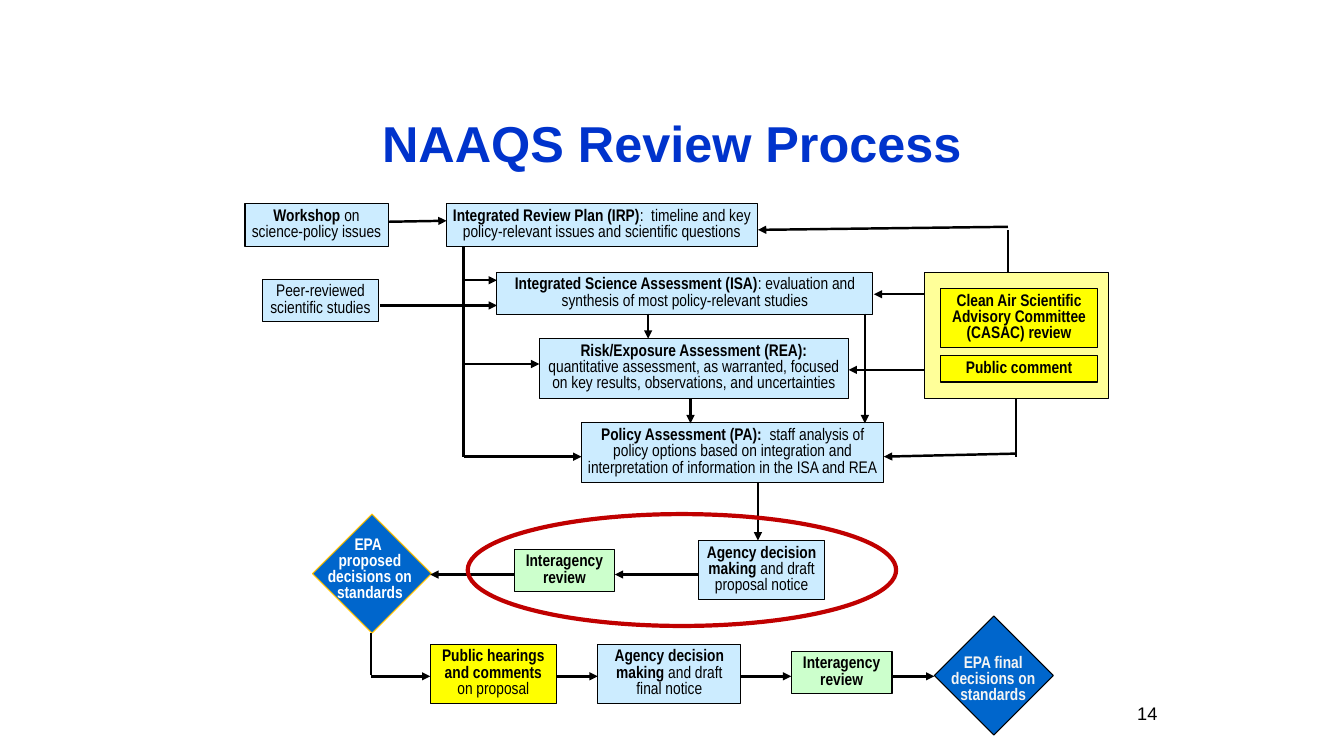
from lxml.etree import SubElement
from pptx import Presentation
from pptx.dml.color import RGBColor
from pptx.enum.shapes import MSO_CONNECTOR as Connector, MSO_SHAPE as Shape
from pptx.enum.text import MSO_ANCHOR as Anchor, PP_ALIGN as Align
from pptx.oxml.ns import qn
from pptx.util import Pt

COLORS = {
    "black": "000000", "white": "FFFFFF", "off_white": "F4F4F4",
    "title": "0033CC", "blue": "CCECFF", "green": "CCFFCC",
    "yellow": "FFFF00", "panel": "FFFF99", "decision": "0066CC",
    "gold": "FFC000", "red": "C00000",
}
NARROW, WIDE = "Arial Narrow", "Arial"
TWO_LINES, THREE_LINES = 30.6, 42.5

PANEL = (660.2, 194.4, 131.8, 90)
HIGHLIGHT = (334.1, 367.2, 306, 79.9)
DIAMONDS = [
    ((667.4, 440, 85, 85), "black"),
    ((223.2, 367.2, 85, 85), "gold"),
]

# name: left, top, width, height, fill, side inset, bold text, regular text
BOXES = [
    (319, 145.4, 221.8, TWO_LINES, "blue", 0.7, "Integrated Review Plan (IRP)",
     ":  timeline and key policy-relevant issues and scientific questions"),
    (355, 194.4, 268.6, TWO_LINES, "blue", 3.6, "Integrated Science Assessment (ISA)",
     ": evaluation and synthesis of most policy-relevant studies"),
    (385.2, 241.9, 221, THREE_LINES, "blue", 3.6, "Risk/Exposure Assessment (REA):",
     " quantitative assessment, as warranted, focused on key results, observations, and uncertainties"),
    (415.4, 302.1, 216, THREE_LINES, "blue", 1.4, "Policy Assessment (PA):",
     "  staff analysis of policy options based on integration and interpretation "
     "of information in the ISA and REA"),
    (175, 145.4, 102.2, TWO_LINES, "blue", 3.6, "Workshop", " on science-policy issues"),
    (187.2, 199.4, 83.5, TWO_LINES, "blue", 3.6, "", "Peer-reviewed scientific studies"),
    (671.8, 205.9, 112.3, THREE_LINES, "yellow", 3.6,
     "Clean Air Scientific Advisory Committee (CASAC) review", ""),
    (671.8, 254.2, 112.3, 18.7, "yellow", 3.6, "Public comment", ""),
    (499, 386, 90, THREE_LINES, "blue", 3.6, "Agency decision making ", "and draft proposal notice"),
    (367.2, 392.2, 72, TWO_LINES, "green", 3.6, "Interagency review", ""),
    (307.4, 460.1, 90, THREE_LINES, "yellow", 3.6, "Public hearings and comments ", "on proposal"),
    (427, 460.1, 102.2, THREE_LINES, "blue", 3.6, "Agency decision making ", "and draft final notice"),
    (565.2, 465.1, 72, TWO_LINES, "green", 3.6, "Interagency review", ""),
]

DECISION_LABELS = [
    ((667.4, 464.4, 84.2, 42.5), ["EPA final decisions on standards"], "off_white"),
    ((215.3, 380.2, 97.9, 54), ["EPA ", "proposed decisions on standards"], "white"),
]

TRUNK_X, FINAL_ROW_Y, PROPOSAL_ROW_Y = 331.2, 483.1, 410.4
LINES = [
    (725.8, 284.4, 725.8, 326.2),
    (720, 164.2, 720, 194.4),
    (265, 452.2, 265, 482.4),
    (TRUNK_X, 176.4, TRUNK_X, 326.2),
]
ARROWS = [
    (277.2, 158.4, 319, 157.7),
    (720, 162, 541.4, 164.2),
    (725.8, 324, 631.4, 326.2),
    (660.2, 210.2, 624.2, 210.2),
    (660.2, 264.2, 606.2, 264.2),
    (271.4, 218.2, 355, 218.2),
    (463, 224, 463, 241.9),
    (493.2, 284.4, 493.2, 302.4),
    (617.8, 224, 617.8, 302.4),
    (541.4, 344.2, 541.4, 386),
]
ARROWS += [(TRUNK_X, y, end, y) for y, end in [(200.2, 355), (260, 385.2), (326.2, 415.4)]]
ARROWS += [(start, PROPOSAL_ROW_Y, end, PROPOSAL_ROW_Y)
           for start, end in [(499, 439.2), (367.2, 307.4)]]
ARROWS += [(start, FINAL_ROW_Y, end, FINAL_ROW_Y)
           for start, end in [(265, 307.4), (397.4, 427), (529.2, 565.2), (637.2, 667.4)]]


def color(name):
    return RGBColor.from_string(COLORS[name])


def add_outline(kind, frame, fill, line, weight=0.75):
    shape = slide.shapes.add_shape(kind, *map(Pt, frame))
    shape.shadow.inherit = False
    if fill:
        shape.fill.solid()
        shape.fill.fore_color.rgb = color(fill)
    else:
        shape.fill.background()
    shape.line.color.rgb = color(line)
    shape.line.width = Pt(weight)
    return shape


def write(shape, paragraphs, ink, size=12, font=NARROW, align=Align.CENTER, spacing=0.8, inset=7.2):
    frame = shape.text_frame
    frame.word_wrap = True
    frame.vertical_anchor = Anchor.TOP
    frame.margin_left = frame.margin_right = Pt(inset)
    frame.margin_top = frame.margin_bottom = Pt(3.6)
    for index, runs in enumerate(paragraphs):
        paragraph = frame.add_paragraph() if index else frame.paragraphs[0]
        paragraph.alignment = align
        paragraph.line_spacing = spacing
        for text, bold in runs:
            run = paragraph.add_run()
            run.text = text
            run.font.name = font
            run.font.size = Pt(size)
            run.font.bold = bold
            run.font.color.rgb = color(ink)


def add_label(frame, paragraphs, ink, **style):
    write(slide.shapes.add_textbox(*map(Pt, frame)), paragraphs, ink, **style)


def add_line(points, arrow):
    connector = slide.shapes.add_connector(Connector.STRAIGHT, *map(Pt, points))
    connector.line.color.rgb = color("black")
    connector.line.width = Pt(1.75)
    if arrow:
        SubElement(connector.line._get_or_add_ln(), qn("a:tailEnd"), type="triangle")
    SubElement(connector._element.spPr, qn("a:effectLst"))


presentation = Presentation()
presentation.slide_width, presentation.slide_height = Pt(960), Pt(540)
slide = presentation.slides.add_slide(presentation.slide_layouts[6])

add_label((120, 76.3, 720, 51.1), [[("NAAQS Review Process", True)]], "title",
          size=36, font=WIDE, spacing=1)
add_outline(Shape.RECTANGLE, PANEL, "panel", "black")
for frame, line in DIAMONDS:
    add_outline(Shape.DIAMOND, frame, "decision", line)
for *frame, fill, inset, bold_text, regular_text in BOXES:
    box = add_outline(Shape.RECTANGLE, frame, fill, "black")
    runs = [(text, bold) for text, bold in [(bold_text, True), (regular_text, False)] if text]
    write(box, [runs], "black", inset=inset)
for frame, texts, ink in DECISION_LABELS:
    add_label(frame, [[(text, True)] for text in texts], ink)
for points in LINES:
    add_line(points, False)
for points in ARROWS:
    add_line(points, True)
add_outline(Shape.OVAL, HIGHLIGHT, None, "red", 3)
add_label((684, 498.2, 149.8, 36), [[("14", False)]], "black",
          size=13, font=WIDE, align=Align.RIGHT, spacing=1)

presentation.save("out.pptx")
